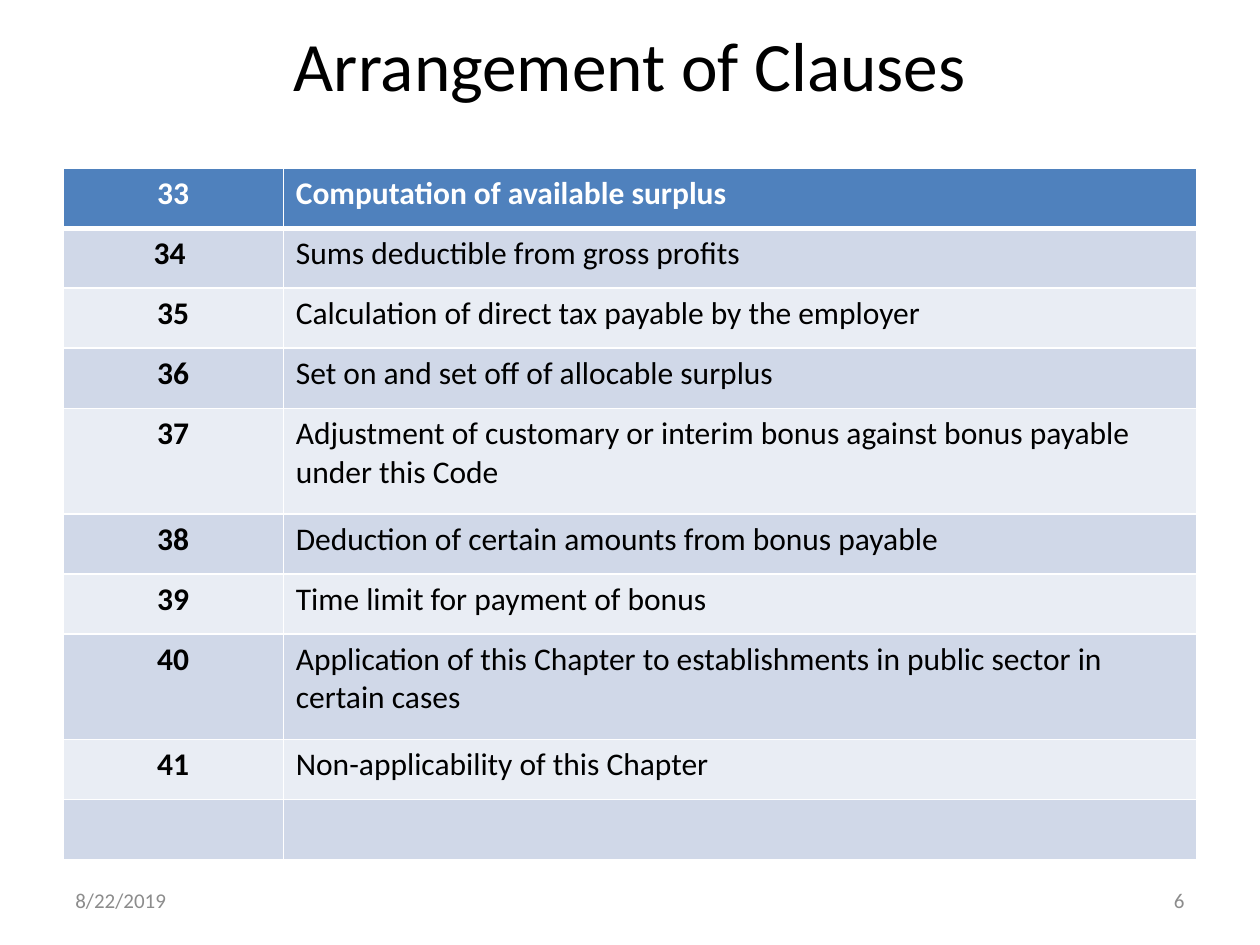
"""Build the slide that lists clauses 33 to 41 in a table."""
from lxml.etree import SubElement
from pptx import Presentation
from pptx.dml.color import RGBColor
from pptx.enum.text import MSO_ANCHOR as Anchor, MSO_AUTO_SIZE as AutoSize, PP_ALIGN as Align
from pptx.oxml.ns import qn
from pptx.util import Cm, Pt

BLACK = RGBColor(0x00, 0x00, 0x00)
WHITE = RGBColor(0xFF, 0xFF, 0xFF)
GRAY = RGBColor(0x8C, 0x8C, 0x8C)
HEADER = RGBColor(0x4F, 0x81, 0xBD)
BANDS = (RGBColor(0xE9, 0xED, 0xF4), RGBColor(0xD0, 0xD8, 0xE8))

MARGIN = Cm(1.27)
CONTENT_WIDTH = Cm(22.86)
COLUMN_WIDTHS = (Cm(4.44), Cm(18.42))
ROW_HEIGHT, TALL_ROW_HEIGHT = Cm(1.21), Cm(2.13)
TALL_CLAUSES = ("37", "40")
FOOTER_WIDTH = Cm(5.93)

CLAUSES = (
    ("33", "Computation of available surplus"),
    ("34 ", "Sums deductible from gross profits"),
    ("35", "Calculation of direct tax payable by the employer"),
    ("36", "Set on and set off of allocable surplus"),
    ("37", "Adjustment of customary or interim bonus against bonus payable under this Code"),
    ("38", "Deduction of certain amounts from bonus payable"),
    ("39", "Time limit for payment of bonus"),
    ("40", "Application of this Chapter to establishments in public sector in certain cases"),
    ("41", "Non-applicability of this Chapter"),
    ("", ""),
)


def set_values(target, values):
    """Set each named attribute of the target."""
    for name, value in values.items():
        setattr(target, name, value)


def write(frame, text, align, color, size, bold=False):
    """Put one formatted run of text into a text frame."""
    para = frame.paragraphs[0]
    para.alignment = align
    if text:
        span = para.add_run()
        span.text = text
        set_values(span.font, {"name": "Calibri", "size": Pt(size), "bold": bold})
        span.font.color.rgb = color


def add_title(page, text):
    """Place and fill the title placeholder."""
    title = page.shapes.title
    set_values(title, {"left": MARGIN, "top": Cm(0.43), "width": CONTENT_WIDTH, "height": Cm(1.7)})
    set_values(title.text_frame, {"auto_size": AutoSize.NONE, "vertical_anchor": Anchor.MIDDLE})
    write(title.text_frame, text, Align.CENTER, BLACK, 39.6)


def add_footer(page, left, text, align):
    """Add a small gray text at the foot of the page."""
    box = page.shapes.add_textbox(left, Cm(17.65), FOOTER_WIDTH, Cm(1.01))
    set_values(box.text_frame, {"word_wrap": True, "vertical_anchor": Anchor.MIDDLE})
    write(box.text_frame, text, align, GRAY, 12)


def add_borders(cell, widths):
    """Draw white lines on the sides of a cell."""
    properties = cell._tc.get_or_add_tcPr()
    for side, width in widths.items():
        line = SubElement(properties, qn(f"a:ln{side}"), w=str(Pt(width)))
        fill = SubElement(line, qn("a:solidFill"))
        SubElement(fill, qn("a:srgbClr"), val=str(WHITE))


def add_clause_table(page):
    """Add the table of clause numbers and headings."""
    frame = page.shapes.add_table(
        len(CLAUSES), len(COLUMN_WIDTHS), MARGIN, Cm(3.39), CONTENT_WIDTH, ROW_HEIGHT)
    table = frame.table
    for column, width in zip(table.columns, COLUMN_WIDTHS):
        column.width = width
    for index, (row, clause) in enumerate(zip(table.rows, CLAUSES)):
        row.height = TALL_ROW_HEIGHT if clause[0] in TALL_CLAUSES else ROW_HEIGHT
        header = index == 0
        top, bottom = (3 if index == 1 else 1), (3 if header else 1)
        for position, (cell, text) in enumerate(zip(row.cells, clause)):
            number = position == 0
            add_borders(cell, {"L": 1, "R": 1, "T": top, "B": bottom})
            cell.fill.solid()
            cell.fill.fore_color.rgb = HEADER if header else BANDS[index % 2]
            write(cell.text_frame, text, Align.CENTER if number else Align.LEFT,
                  WHITE if header else BLACK, 18, header or number)


def main():
    """Build and save the deck."""
    deck = Presentation()
    set_values(deck, {"slide_width": Cm(25.4), "slide_height": Cm(19.05)})
    page = deck.slides.add_slide(deck.slide_layouts[5])
    add_title(page, "Arrangement of Clauses")
    add_clause_table(page)
    add_footer(page, MARGIN, "8/22/2019", Align.LEFT)
    add_footer(page, MARGIN + CONTENT_WIDTH - FOOTER_WIDTH, "6", Align.RIGHT)
    deck.save("out.pptx")


if __name__ == "__main__":
    main()
